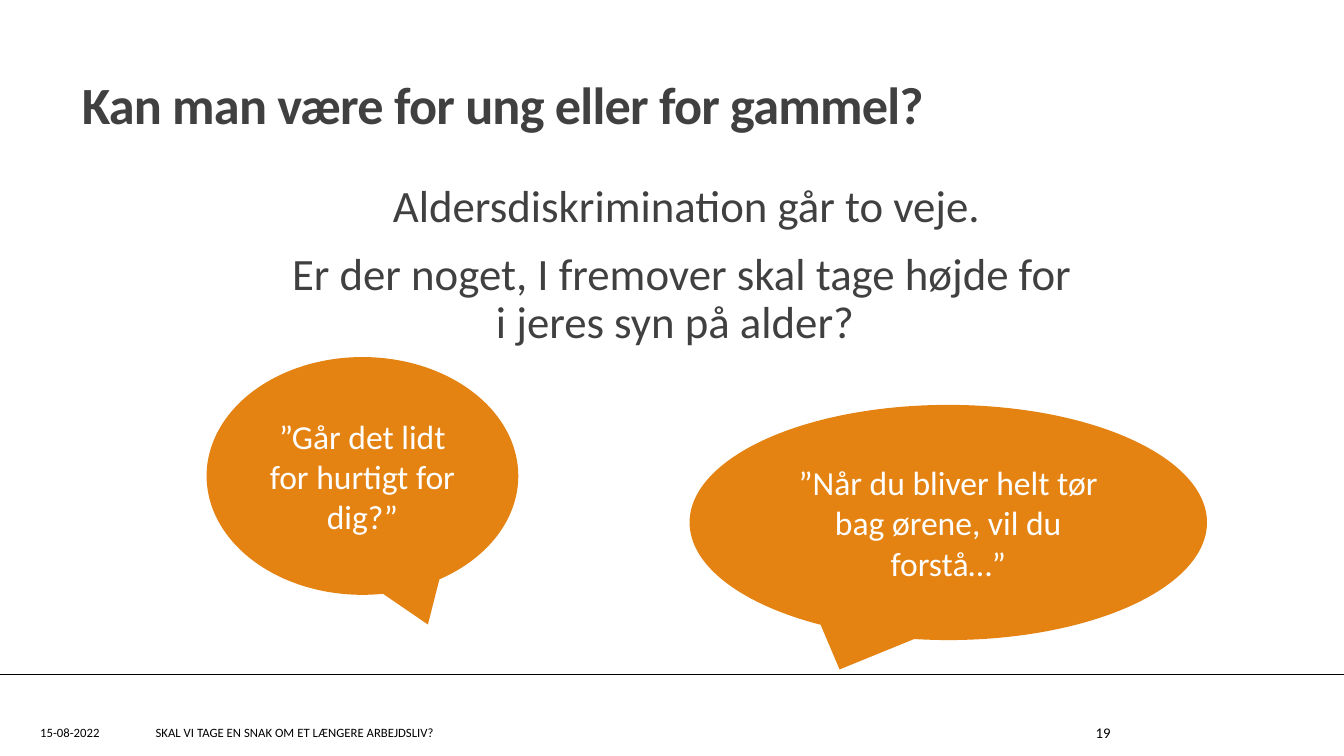
from pptx import Presentation
from pptx.dml.color import RGBColor
from pptx.enum.shapes import MSO_CONNECTOR, MSO_SHAPE
from pptx.enum.text import MSO_ANCHOR, PP_ALIGN
from pptx.oxml.ns import qn
from pptx.util import Pt
from lxml import etree

LEFT, CENTER, RIGHT = PP_ALIGN.LEFT, PP_ALIGN.CENTER, PP_ALIGN.RIGHT
TOP, MIDDLE = MSO_ANCHOR.TOP, MSO_ANCHOR.MIDDLE
CALLOUT = MSO_SHAPE.OVAL_CALLOUT
STRAIGHT = MSO_CONNECTOR.STRAIGHT
WIDTH, HEIGHT = 720, 405


def color(value):
    return RGBColor.from_string(value)


class SlideBuilder:
    """Holds the style and the current slide."""

    font_name = "Calibri"
    dark = "404040"
    black = "000000"
    white = "FFFFFF"
    accent = "E48312"

    def __init__(self, slide):
        self.slide = slide

    def style(self, paragraph, size, ink, align=LEFT, bold=False):
        paragraph.alignment = align
        font = paragraph.font
        font.name = self.font_name
        font.size = Pt(size)
        font.bold = bold
        font.color.rgb = color(ink)

    def frame(self, left, top, width, height, anchor):
        box = self.slide.shapes.add_textbox(Pt(left), Pt(top), Pt(width), Pt(height))
        text_frame = box.text_frame
        text_frame.word_wrap = True
        text_frame.vertical_anchor = anchor
        return text_frame

    def rule(self, top):
        line = self.slide.shapes.add_connector(STRAIGHT, Pt(0), Pt(top), Pt(WIDTH), Pt(top))
        line.line.color.rgb = color(self.black)
        line.line.width = Pt(0.25)
        etree.SubElement(line._element.spPr, qn("a:effectLst"))

    def title(self, text, left, top, width, height):
        paragraph = self.frame(left, top, width, height, TOP).paragraphs[0]
        paragraph.text = text
        paragraph.line_spacing = 0.85
        paragraph.runs[0]._r.get_or_add_rPr().set("spc", "-40")
        self.style(paragraph, 28, self.dark, bold=True)

    def body(self, texts, left, top, width, height):
        text_frame = self.frame(left, top, width, height, TOP)
        text_frame.margin_left = text_frame.margin_right = 0
        for index, text in enumerate(texts):
            paragraph = text_frame.add_paragraph() if index else text_frame.paragraphs[0]
            paragraph.text = text
            self.blank_bullet(paragraph)
            paragraph.line_spacing = 0.9
            paragraph.space_before = Pt(9 if index else 0)
            paragraph.space_after = Pt(1.5)
            self.style(paragraph, 24, self.dark, CENTER)

    def blank_bullet(self, paragraph):
        properties = paragraph._p.get_or_add_pPr()
        properties.set("marL", str(Pt(5)))
        properties.set("indent", str(Pt(-5)))
        bullet_color = etree.SubElement(properties, qn("a:buClr"))
        etree.SubElement(bullet_color, qn("a:srgbClr"), val=self.accent)
        etree.SubElement(properties, qn("a:buChar"), char=" ")

    def callout(self, text, left, top, width, height, tip_x):
        shape = self.slide.shapes.add_shape(CALLOUT, Pt(left), Pt(top), Pt(width), Pt(height))
        shape.adjustments[0] = tip_x
        shape.adjustments[1] = 0.625
        shape.shadow.inherit = False
        shape.fill.solid()
        shape.fill.fore_color.rgb = color(self.accent)
        shape.line.fill.background()
        text_frame = shape.text_frame
        text_frame.word_wrap = True
        text_frame.vertical_anchor = MIDDLE
        text_frame.text = text
        self.style(text_frame.paragraphs[0], 18, self.white, CENTER)

    def footer(self, text, left, width, size, align=LEFT):
        paragraph = self.frame(left, 381.6, width, 21.6, MIDDLE).paragraphs[0]
        paragraph.text = text
        self.style(paragraph, size, self.black, align)


def main():
    presentation = Presentation()
    presentation.slide_width = Pt(WIDTH)
    presentation.slide_height = Pt(HEIGHT)
    builder = SlideBuilder(presentation.slides.add_slide(presentation.slide_layouts[6]))

    builder.rule(361.4)
    builder.title("Kan man være for ung eller for gammel?", 36.7, 40.3, 594, 61.2)
    builder.body(
        [
            "Aldersdiskrimination går to veje.",
            "Er der noget, I fremover skal tage højde for \vi jeres syn på alder? ",
        ],
        64.8, 95, 594, 237.6,
    )
    builder.callout(
        "”Når du bliver helt tør bag ørene, vil du forstå…”", 369.4, 216.9, 277.2, 126, -0.21
    )
    builder.callout("”Går det lidt for hurtigt for dig?”", 110.7, 191.3, 167, 127.4, 0.21)
    builder.footer("15-08-2022", 14.4, 56.9, 6.8)
    builder.footer("SKAL VI TAGE EN SNAK OM ET LÆNGERE ARBEJDSLIV?", 76.3, 215.3, 6.8)
    builder.footer("19", 524.2, 77.8, 7.9, RIGHT)

    presentation.save("out.pptx")


if __name__ == "__main__":
    main()
